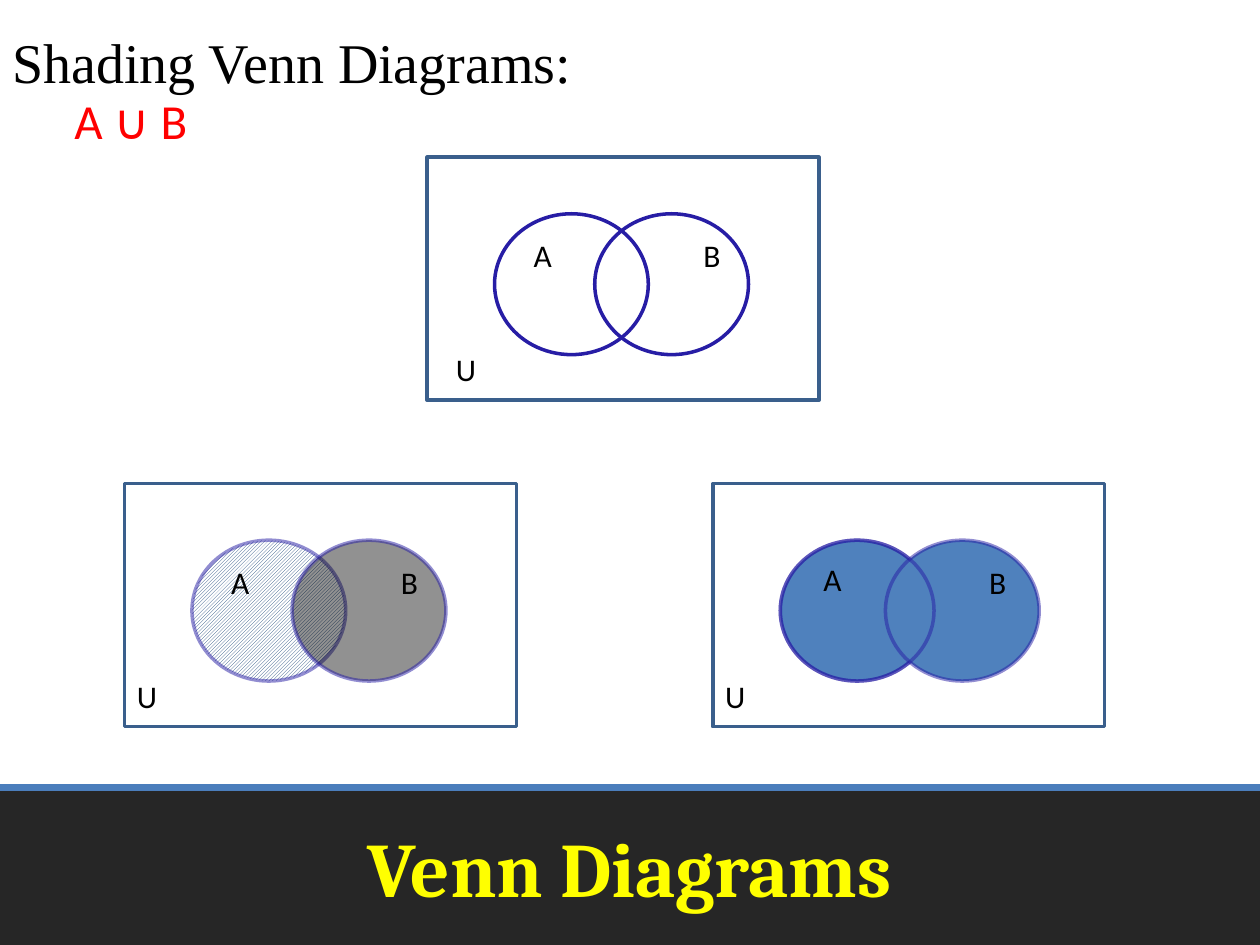
from dataclasses import dataclass

from lxml import etree
from pptx import Presentation
from pptx import util as u
from pptx.dml.color import RGBColor
from pptx.enum import dml, shapes, text
from pptx.oxml.ns import qn


@dataclass(frozen=True)
class Theme:
    """Colours, fonts and sizes of the slide."""
    white: str = "FFFFFF"
    black: str = "000000"
    band: str = "262626"
    rule: str = "4B7EBC"
    title: str = "FFFF00"
    red: str = "FF0000"
    frame: str = "3A5F8C"
    ring: str = "271DA5"
    hatch: str = "1F497D"
    blue: str = "4F81BD"
    serif: str = "Times New Roman"
    sans: str = "Calibri"
    display: str = "Cambria"
    big: int = 44
    head: int = 32
    sub: int = 28
    small: int = 18
    thin: int = 2
    thick: int = 4


T = Theme()
RECT = shapes.MSO_SHAPE.RECTANGLE
OVAL = shapes.MSO_SHAPE.OVAL


def rgb(code):
    """Return a colour from its hex code."""
    return RGBColor.from_string(code)


def fade(node, share):
    """Set the opacity in percent of the first colour in a node."""
    tint = next(node.iter(qn("a:srgbClr")))
    etree.SubElement(tint, qn("a:alpha")).set("val", str(share * 1000))


def write(para, words, font, size, color, bold=False):
    """Add one formatted run to a paragraph."""
    run = para.add_run()
    run.text = words
    run.font.name, run.font.size, run.font.bold = font, u.Pt(size), bold
    run.font.color.rgb = rgb(color)


def note(parts, box, words, font, size, color, wrap=False):
    """Place a text box and return its paragraph."""
    item = parts.add_textbox(*map(u.Cm, box))
    frame = item.text_frame
    frame.word_wrap = wrap
    frame.auto_size = text.MSO_AUTO_SIZE.SHAPE_TO_FIT_TEXT
    para = frame.paragraphs[0]
    write(para, words, font, size, color)
    return para


def block(parts, kind, box, fill=None, line=None):
    """Place a flat shape with an optional fill and outline."""
    item = parts.add_shape(kind, *map(u.Cm, box))
    item.shadow.inherit = False
    if fill:
        item.fill.solid()
        item.fill.fore_color.rgb = rgb(fill)
    else:
        item.fill.background()
    if line:
        item.line.color.rgb = rgb(line)
        item.line.width = u.Pt(T.thin)
    else:
        item.line.fill.background()
    return item


def ring(parts, box, fill=None, soft=True):
    """Place one set circle, with a half clear outline if soft."""
    item = block(parts, OVAL, box, fill, T.ring)
    if soft:
        fade(item.element.spPr.find(qn("a:ln")), 50)
    return item


def venn(parts, box, style):
    """Draw a framed two-set diagram in one of three styles."""
    left, top, wide, high = box
    joint = style == "union"
    block(parts, RECT, box, T.white, T.frame)
    size = (3.1, 2.84)
    one = (left + 1.36, top + 1.14, *size)
    two = (left + (3.48 if joint else 3.38), top + 1.14, *size)
    fill = T.blue if joint else None
    soft = style != "plain"
    first = ring(parts, one, fill, soft)
    last = ring(parts, two, T.black if style == "shaded" else fill, soft)
    if style == "shaded":
        first.fill.patterned()
        first.fill.pattern = dml.MSO_PATTERN.LIGHT_UPWARD_DIAGONAL
        first.fill.fore_color.rgb = rgb(T.hatch)
        first.fill.back_color.rgb = rgb(T.white)
        fade(last.element.spPr.find(qn("a:solidFill")), 43)
    if joint:
        ring(parts, one)
    spots = {
        "U": (0 if soft else 0.33, high - 1.13),
        "A": (1.98, 1.42) if joint else (1.9, 1.47),
        "B": (5.32, 1.47),
    }
    for name, (dx, dy) in spots.items():
        spot = (left + dx, top + dy, 0.81, 1.02)
        note(parts, spot, name, T.sans, T.small, T.black)


def footer(slide, box):
    """Draw the dark band with its rule and the slide title."""
    left, top, wide, high = box
    parts = slide.shapes
    block(parts, RECT, box, T.band)
    rule = parts.add_connector(shapes.MSO_CONNECTOR.STRAIGHT,
                               *map(u.Cm, (left, top, left + wide, top)))
    rule.line.color.rgb = rgb(T.rule)
    rule.line.width = u.Pt(T.thick)
    etree.SubElement(rule.element.spPr, qn("a:effectLst"))
    title = parts.title
    title.left, title.top, title.width, title.height = map(
        u.Cm, (left + 1.27, top, wide - 2.54, high))
    title.text_frame.vertical_anchor = text.MSO_ANCHOR.MIDDLE
    para = title.text_frame.paragraphs[0]
    para.alignment = text.PP_ALIGN.CENTER
    write(para, "Venn Diagrams", T.display, T.big, T.title, True)
    title.element.getparent().append(title.element)


def header(parts, box):
    """Write the heading and the set formula below it."""
    left, top, wide, high = box
    para = note(parts, (left, top, wide, high), "Shading Venn Diagrams:",
                T.serif, T.head, T.black, True)
    para.space_before = u.Pt(5)
    props = para._p.get_or_add_pPr()
    props.set("marL", str(u.Cm(0.95)))
    props.set("indent", str(u.Cm(-0.95)))
    para = note(parts, (left - 0.02, top + 1.27, 4.9, 1.45), "A ∪ B",
                T.sans, T.sub, T.red, True)
    para.level = 1
    para._p.get_or_add_pPr().set("marL", str(u.Cm(1.27)))


def main():
    """Build and save the slide."""
    deck = Presentation()
    deck.slide_width, deck.slide_height = u.Cm(25.4), u.Cm(19.05)
    slide = deck.slides.add_slide(deck.slide_layouts[5])
    parts = slide.shapes
    footer(slide, (0, 15.88, 25.4, 3.17))
    header(parts, (0, 0.43, 25.4, 1.47))
    size = (7.9, 4.9)
    venn(parts, (8.61, 3.17, *size), "plain")
    venn(parts, (2.51, 9.75, *size), "shaded")
    venn(parts.add_group_shape().shapes, (14.37, 9.75, *size), "union")
    deck.save("out.pptx")


if __name__ == "__main__":
    main()
